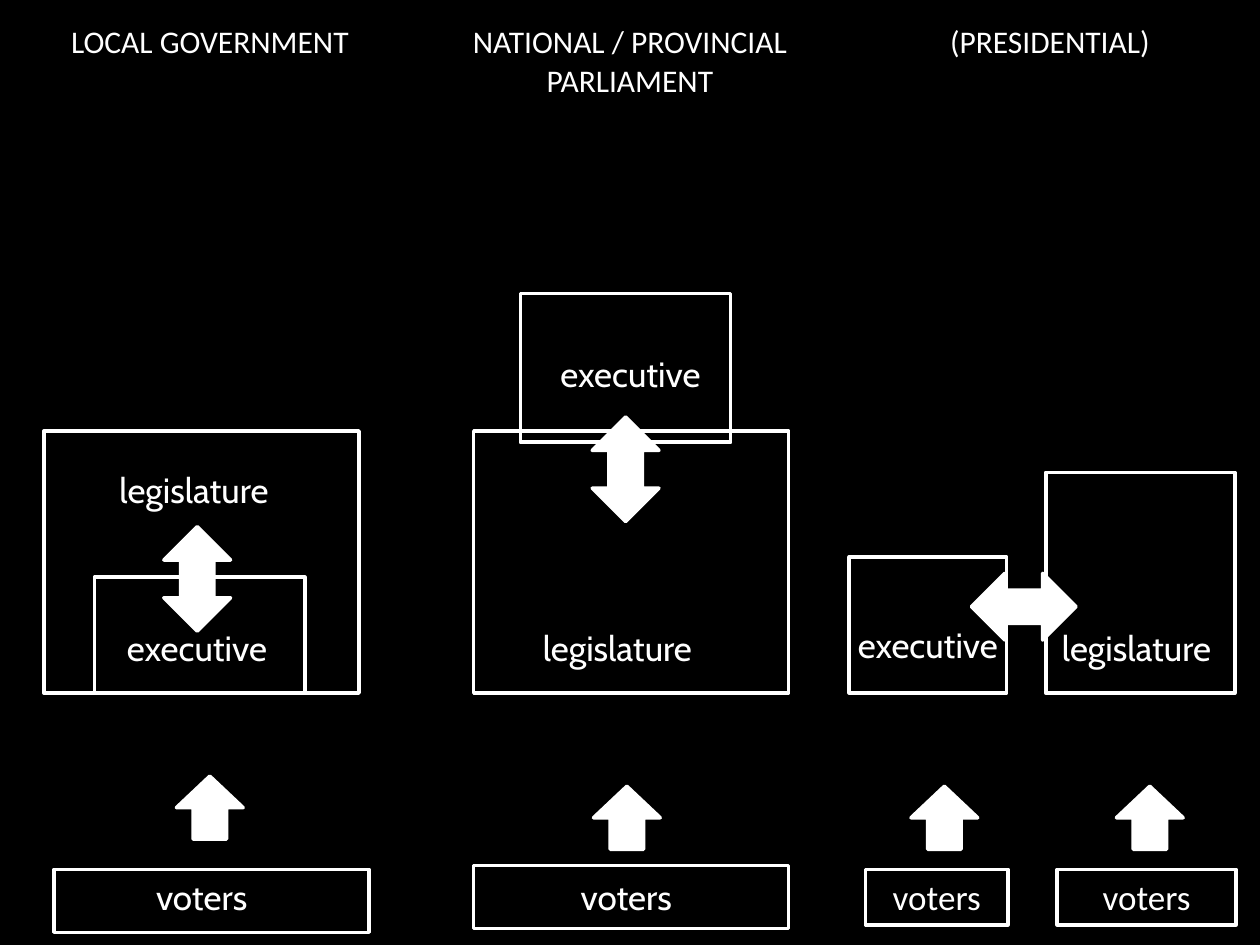
from pptx import Presentation
from pptx.dml.color import RGBColor
from pptx.enum.shapes import MSO_SHAPE
from pptx.enum.text import MSO_ANCHOR, MSO_AUTO_SIZE, PP_ALIGN
from pptx.util import Inches, Pt

COLUMNS, ROWS = 100, 75
WHITE, BLACK = "FFFFFF", "000000"
PLAIN_TABLE = "{2D5ABB26-0587-4C30-8999-92F81FD0307C}"


def color(code):
    return RGBColor.from_string(code)


def apply(target, formats):
    for name, value in formats.items():
        setattr(target, name, value)


class Diagram:
    label_size = {"executive": (13.6, 4.4), "legislature": (14.7, 4.4), "voters": (9.6, 4.4)}

    def __init__(self, deck):
        self.cell_width = deck.slide_width / COLUMNS
        self.cell_height = deck.slide_height / ROWS
        self.slide = deck.slides.add_slide(deck.slide_layouts[6])
        self.slide.background.fill.solid()
        self.slide.background.fill.fore_color.rgb = color(BLACK)

    def place(self, left, top, width, height):
        return (round(left * self.cell_width), round(top * self.cell_height),
                round(width * self.cell_width), round(height * self.cell_height))

    def outline(self, shape, code, weight):
        shape.line.color.rgb = color(code)
        shape.line.width = Pt(weight)

    def add_words(self, paragraph, words, font, size, align):
        paragraph.alignment = align
        run = paragraph.add_run()
        run.text = words
        apply(run.font, {"name": font, "size": Pt(size), "bold": False})
        run.font.color.rgb = color(WHITE)

    def box(self, at, weight=2, words=None):
        frame = self.slide.shapes.add_shape(MSO_SHAPE.RECTANGLE, *self.place(*at))
        frame.shadow.inherit = False
        frame.fill.background()
        self.outline(frame, WHITE, weight)
        if words:
            apply(frame.text_frame, {"word_wrap": True, "auto_size": MSO_AUTO_SIZE.SHAPE_TO_FIT_TEXT,
                                     "vertical_anchor": MSO_ANCHOR.TOP})
            self.add_words(frame.text_frame.paragraphs[0], words, "Calibri", 20, PP_ALIGN.CENTER)

    def label(self, words, left, top, edged=True):
        caption = self.slide.shapes.add_textbox(*self.place(left, top, *self.label_size[words]))
        if edged:
            self.outline(caption, BLACK, 0.75)
        apply(caption.text_frame, {"word_wrap": False, "auto_size": MSO_AUTO_SIZE.SHAPE_TO_FIT_TEXT})
        self.add_words(caption.text_frame.paragraphs[0], words, "Cabin", 20, PP_ALIGN.LEFT)

    def arrow(self, kind, at, rotation):
        pointer = self.slide.shapes.add_shape(kind, *self.place(*at))
        pointer.rotation = rotation
        pointer.shadow.inherit = False
        pointer.fill.solid()
        pointer.fill.fore_color.rgb = color(WHITE)
        self.outline(pointer, WHITE, 2)

    def vote_arrow(self, left, top):
        self.arrow(MSO_SHAPE.DOWN_ARROW, (left, top, 5.3, 5), 180)

    def exchange_arrow(self, left, top, rotation):
        self.arrow(MSO_SHAPE.LEFT_RIGHT_ARROW, (left, top, 8.3, 5.3), rotation)

    def headings(self, names, at):
        table = self.slide.shapes.add_table(1, len(names), *self.place(*at)).table
        apply(table, {"first_row": False, "horz_banding": False})
        table._tbl.tblPr[0].text = PLAIN_TABLE
        for cell, name in zip(table.rows[0].cells, names):
            cell.fill.background()
            self.add_words(cell.text_frame.paragraphs[0], name, "Calibri", 18, PP_ALIGN.CENTER)


def main():
    deck = Presentation()
    apply(deck, {"slide_width": Inches(10), "slide_height": Inches(7.5)})
    diagram = Diagram(deck)

    floor = 55
    for left, top, width, weight in [(3.5, 34.2, 25, 2), (7.5, 45.8, 16.7, 2), (37.6, 34.2, 25, 2),
                                     (83, 37.5, 15, 2.25), (67.4, 44.2, 12.5, 2)]:
        diagram.box((left, top, width, floor - top), weight)
    diagram.box((41.3, 23.3, 16.7, 11.8))

    for left, top in [(4.3, 69), (37.6, 68.7)]:
        diagram.box((left, top, 25, 5))
    for left, width in [(68.7, 11.3), (83.9, 14.2)]:
        diagram.box((left, 69, width, 4.4), words="voters")

    for words, left, top, edged in [
        ("executive", 9.1, 49.2, True), ("legislature", 8.5, 36.7, True),
        ("legislature", 42.1, 49.2, True), ("executive", 43.5, 27.5, True),
        ("legislature", 83.3, 49.2, False), ("executive", 67.1, 49, False),
        ("voters", 11.4, 69, False), ("voters", 45.1, 69, True),
    ]:
        diagram.label(words, left, top, edged)

    for left, top in [(14, 61.6), (47.1, 62.4), (72.3, 62.4), (88.6, 62.4)]:
        diagram.vote_arrow(left, top)
    for left, top, rotation in [(45.5, 34.6, 90), (11.5, 43.3, 90), (77.1, 45.5, 180)]:
        diagram.exchange_arrow(left, top, rotation)

    diagram.headings(["LOCAL GOVERNMENT", "NATIONAL / PROVINCIAL PARLIAMENT", "(PRESIDENTIAL)"],
                     (0, 1.4, COLUMNS, 7))
    deck.save("out.pptx")


if __name__ == "__main__":
    main()
